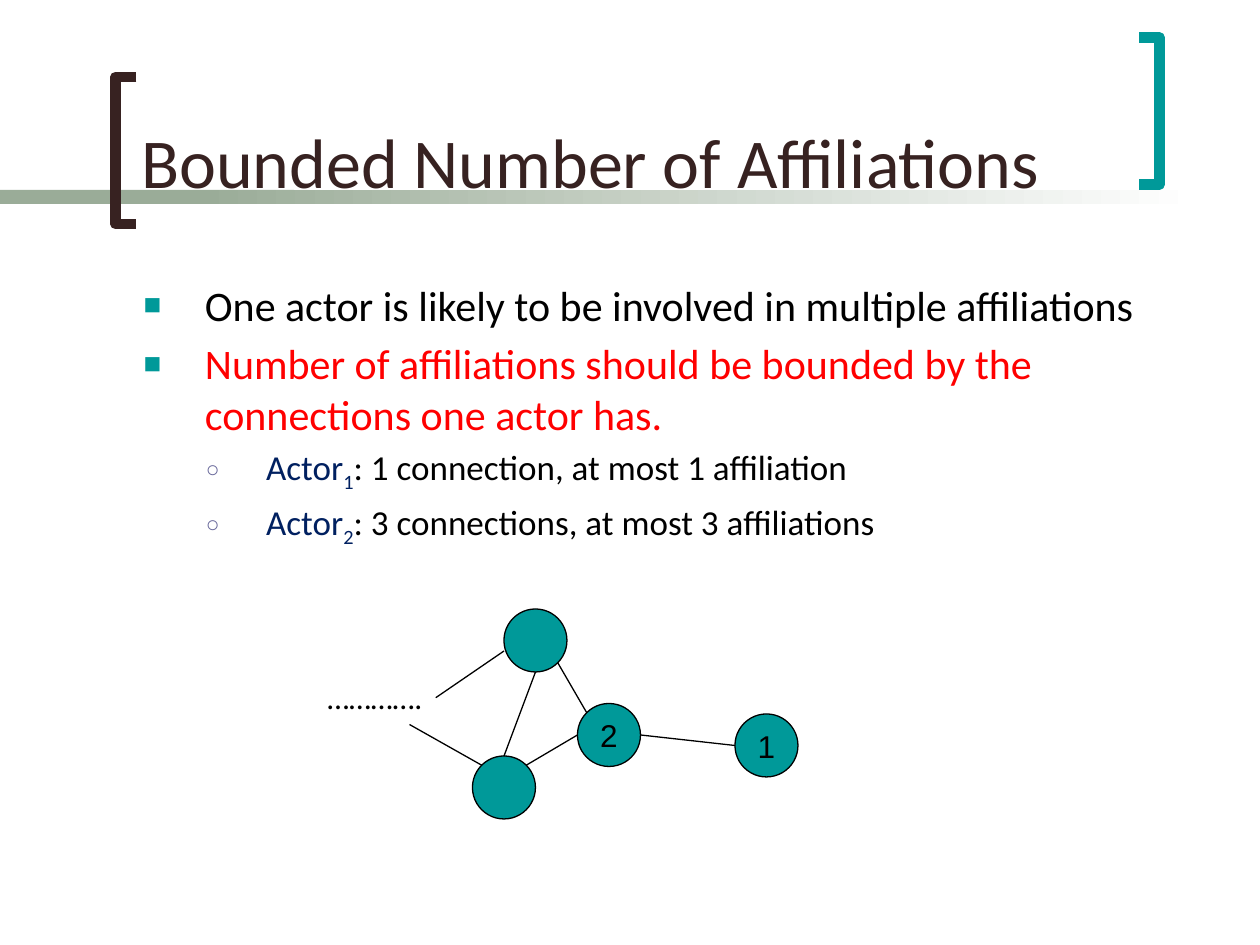
import pptx
import pptx.util
import pptx.dml.color
import pptx.enum.shapes
import pptx.enum.text
import pptx.oxml.ns
import lxml.etree

Pt = pptx.util.Pt
SHAPE = pptx.enum.shapes.MSO_SHAPE
ANCHOR = pptx.enum.text.MSO_ANCHOR
ALIGN = pptx.enum.text.PP_ALIGN

TEAL, BROWN, SAGE = "009999", "372221", "9AAC98"
BLACK, WHITE, RED, NAVY, VIOLET = "000000", "FFFFFF", "FF0000", "002060", "666699"
NODE_SIZE = 36


def color(hex_text):
    return pptx.dml.color.RGBColor.from_string(hex_text)


def set_font(font, size, hex_text, name="Calibri"):
    font.name = name
    font.size = Pt(size)
    font.color.rgb = color(hex_text)


def add_xml(parent, tag, **attributes):
    return lxml.etree.SubElement(parent, pptx.oxml.ns.qn(tag), attributes)


def add_bar(shapes, left, width, end_color=None):
    """Add a piece of the title rule, fading to end_color if one is given."""
    bar = shapes.add_shape(SHAPE.RECTANGLE, Pt(left), Pt(108.6), Pt(width), Pt(8))
    bar.shadow.inherit = False
    bar.line.fill.background()
    if end_color:
        bar.fill.gradient()
        bar.fill.gradient_angle = 0
        for stop, hex_text in zip(bar.fill.gradient_stops, (SAGE, end_color)):
            stop.color.rgb = color(hex_text)
    else:
        bar.fill.solid()
        bar.fill.fore_color.rgb = color(SAGE)


def add_bracket(shapes, open_x, spine_x, top, hex_text):
    bottom = top + 84
    builder = shapes.build_freeform(Pt(open_x), Pt(top))
    corners = [(spine_x, top), (spine_x, bottom), (open_x, bottom)]
    builder.add_line_segments([(Pt(x), Pt(y)) for x, y in corners], close=False)
    bracket = builder.convert_to_shape()
    bracket.shadow.inherit = False
    bracket.fill.background()
    bracket.line.color.rgb = color(hex_text)
    bracket.line.width = Pt(6)


def format_title(slide, text):
    title = slide.shapes.title
    title.left, title.top, title.width, title.height = Pt(73.5), Pt(8), Pt(564), Pt(111.6)
    frame = title.text_frame
    frame.text = text
    frame.auto_size = pptx.enum.text.MSO_AUTO_SIZE.NONE
    frame.vertical_anchor = ANCHOR.BOTTOM
    paragraph = frame.paragraphs[0]
    paragraph.alignment = ALIGN.LEFT
    set_font(paragraph.font, 40, BROWN)
    # The title lies in front of the rule and the brackets.
    slide.shapes.element.append(title.element)


def format_bullet(paragraph, size, character, hex_text, percent, margin, hanging):
    paragraph.space_before = Pt(size * 0.2)
    properties = paragraph._p.get_or_add_pPr()
    properties.set("marL", str(Pt(margin)))
    properties.set("indent", str(-Pt(hanging)))
    add_xml(add_xml(properties, "a:buClr"), "a:srgbClr", val=hex_text)
    add_xml(properties, "a:buSzPct", val=str(percent * 1000))
    add_xml(properties, "a:buFont", typeface="Arial")
    add_xml(properties, "a:buChar", char=character)


def add_point(paragraph, text, hex_text):
    format_bullet(paragraph, 24, "■", TEAL, 70, 35, 35)
    paragraph.text = text
    set_font(paragraph.font, 24, hex_text)


def add_actor_point(paragraph, number, text):
    paragraph.level = 1
    format_bullet(paragraph, 20, "○", VIOLET, 65, 70, 34.5)
    for part, hex_text in (("Actor", NAVY), (number, NAVY), (": " + text, BLACK)):
        run = paragraph.add_run()
        run.text = part
        set_font(run.font, 20, hex_text)
    paragraph.runs[1]._r.get_or_add_rPr().set("baseline", "-25000")


def add_body(shapes):
    frame = shapes.add_textbox(Pt(75), Pt(156), Pt(603), Pt(324)).text_frame
    frame.word_wrap = True
    add_point(frame.paragraphs[0],
              "One actor is likely to be involved in multiple affiliations", BLACK)
    add_point(frame.add_paragraph(),
              "Number of affiliations should be bounded by the connections one actor has.", RED)
    add_actor_point(frame.add_paragraph(), "1", "1 connection, at most 1 affiliation")
    add_actor_point(frame.add_paragraph(), "2", "3 connections, at most 3 affiliations")


def add_node(shapes, left, top, label):
    node = shapes.add_shape(SHAPE.OVAL, Pt(left), Pt(top), Pt(NODE_SIZE), Pt(NODE_SIZE))
    node.shadow.inherit = False
    node.fill.solid()
    node.fill.fore_color.rgb = color(TEAL)
    node.line.color.rgb = color(BLACK)
    node.line.width = Pt(0.75)
    if label:
        frame = node.text_frame
        frame.text = label
        frame.word_wrap = False
        frame.vertical_anchor = ANCHOR.MIDDLE
        paragraph = frame.paragraphs[0]
        paragraph.alignment = ALIGN.CENTER
        set_font(paragraph.font, 18, BLACK, "Arial")


def add_edge(shapes, *ends):
    edge = shapes.add_connector(pptx.enum.shapes.MSO_CONNECTOR.STRAIGHT,
                                *(Pt(value) for value in ends))
    edge.line.color.rgb = color(BLACK)
    edge.line.width = Pt(0.75)
    add_xml(edge._element.spPr, "a:effectLst")


def add_network(shapes):
    for left, top, label in ((420, 408, "1"), (330, 402, "2"), (288, 348, ""), (270, 432, "")):
        add_node(shapes, left, top, label)
    for ends in (
        (318.7, 378.7, 335.3, 407.3),
        (306, 384, 288, 432),
        (300.7, 437.3, 330, 420),
        (366, 420, 420, 426),
        (288, 372, 249, 398.7),
        (275.3, 437.3, 234, 414),
    ):
        add_edge(shapes, *ends)
    frame = shapes.add_textbox(Pt(180), Pt(384), Pt(69), Pt(29)).text_frame
    frame.word_wrap = False
    frame.text = "…………."
    set_font(frame.paragraphs[0].font, 18, BLACK)


def main():
    presentation = pptx.Presentation()
    presentation.slide_width, presentation.slide_height = Pt(720), Pt(540)
    slide = presentation.slides.add_slide(presentation.slide_layouts[5])
    add_bar(slide.shapes, 0, 168)
    add_bar(slide.shapes, 114, 570, WHITE)
    add_bracket(slide.shapes, 78, 66, 44, BROWN)
    add_bracket(slide.shapes, 651, 662.5, 21.5, TEAL)
    format_title(slide, "Bounded Number of Affiliations")
    add_body(slide.shapes)
    add_network(slide.shapes.add_group_shape().shapes)
    presentation.save("out.pptx")


if __name__ == "__main__":
    main()
